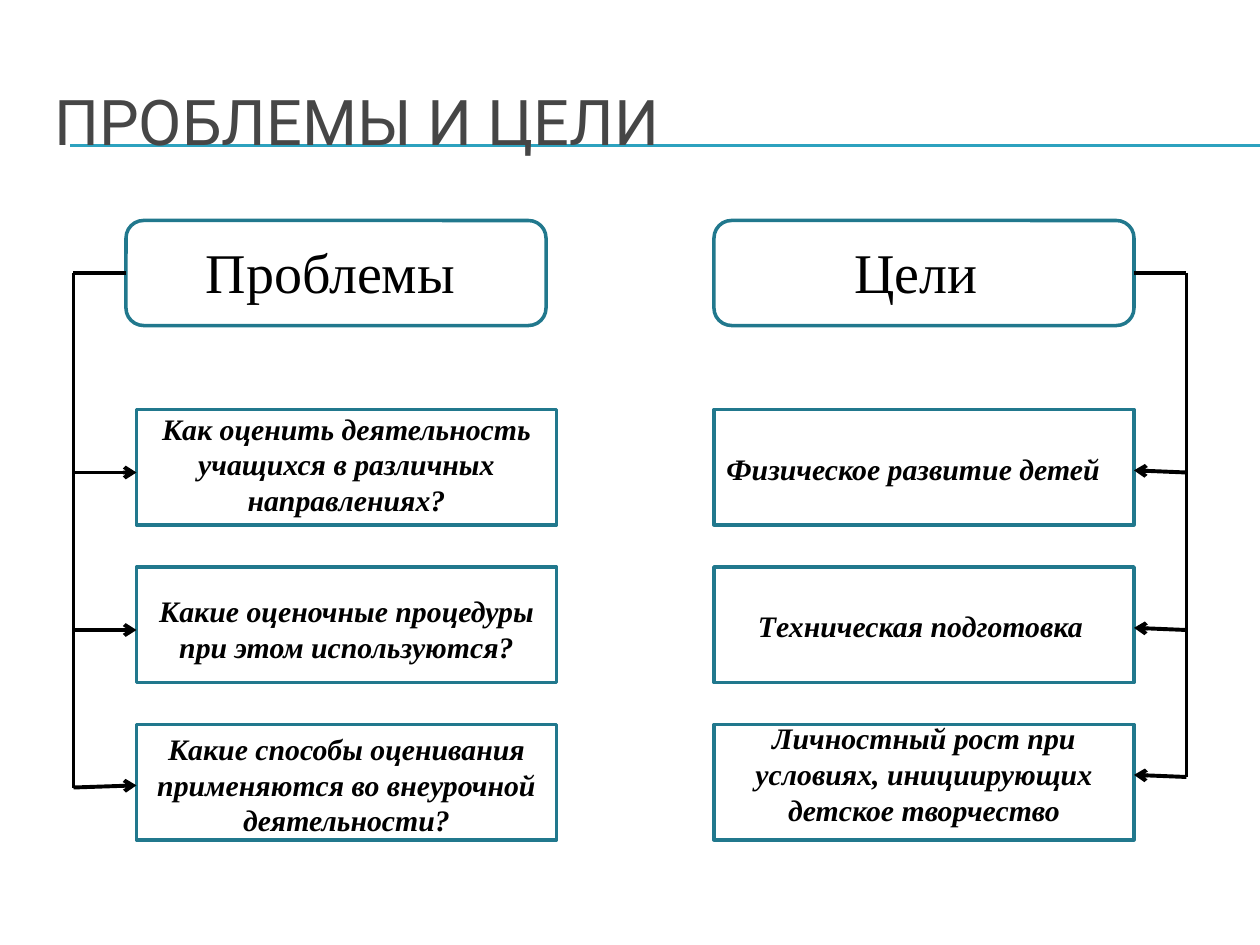
from dataclasses import dataclass

from lxml.etree import SubElement
from pptx import Presentation
from pptx.dml.color import RGBColor
from pptx.enum.shapes import MSO_CONNECTOR, MSO_SHAPE
from pptx.enum.text import MSO_ANCHOR, PP_ALIGN
from pptx.oxml.ns import qn
from pptx.util import Inches, Length, Pt

COLORS = {"title": "464646", "rule": "2DA2BF", "frame": "21788D", "ink": "000000"}

# Grid: twelve units to the inch, 120 columns by 90 rows
COLS, ROWS = 120, 90
BOX_W, HEADER_H, ITEM_H = 40, 10, 11
HEADER_TOP, ITEM_TOP, ITEM_STEP = 21, 39, 15
HEADER_MID = HEADER_TOP + HEADER_H / 2

TITLE_FONT = {"name": "Roboto", "size": Pt(36)}
HEADER_FONT = {"name": "Times New Roman", "size": Pt(32)}
ITEM_FONT = {"name": "Times New Roman", "size": Pt(17), "bold": True, "italic": True}


@dataclass
class Item:
    text: str
    dy: float  # rows from the top of the frame to the text area
    height: float
    dx: float = 0
    align: PP_ALIGN = PP_ALIGN.CENTER


@dataclass
class Branch:
    header: str
    header_left: float
    header_text_left: float
    header_text_width: float
    item_left: float
    trunk: float
    header_edge: float
    item_edge: float
    arrow_starts: list[float]
    arrow_rises: list[float]
    items: list[Item]


BRANCHES = [
    Branch("Проблемы", 12, 18.4, 27.1, 13, 7, 12, 13, [45, 60, 75], [0, 0, 0.2], [
        Item("Как оценить деятельность учащихся в различных направлениях?", -0.5, 11.8),
        Item("Какие оценочные процедуры при этом используются?", 1.9, 8),
        Item("Какие способы оценивания применяются во внеурочной деятельности?", 0, 11.5),
    ]),
    Branch("Цели", 68, 80.2, 15.6, 68, 113, 108, 108, [45, 60, 74], [0.2, 0.2, 0.2], [
        Item("Физическое развитие детей", 3.3, 4.7, align=PP_ALIGN.LEFT),
        Item("Tехническая подготовка", 3.3, 4.7, dx=3, align=PP_ALIGN.LEFT),
        Item("Личностный рост при условиях, инициирующих детское творчество", -1, 11.5),
    ]),
]

prs = Presentation()
prs.slide_width, prs.slide_height = Inches(10), Inches(7.5)
slide = prs.slides.add_slide(prs.slide_layouts[6])


def x(col: float) -> Length:
    return Length(round(prs.slide_width * col / COLS))


def y(row: float) -> Length:
    return Length(round(prs.slide_height * row / ROWS))


def add_line(start: tuple[float, float], end: tuple[float, float], color: str = "ink",
             width: float = 2.25, arrow: bool = False) -> None:
    line = slide.shapes.add_connector(
        MSO_CONNECTOR.STRAIGHT, x(start[0]), y(start[1]), x(end[0]), y(end[1]))
    line.line.color.rgb = RGBColor.from_string(COLORS[color])
    line.line.width = Pt(width)
    properties = line.element.spPr
    if arrow:
        SubElement(properties.find(qn("a:ln")), qn("a:tailEnd"), type="arrow")
    SubElement(properties, qn("a:effectLst"))


def add_frame(kind: MSO_SHAPE, left: float, top: float, height: float) -> None:
    frame = slide.shapes.add_shape(kind, x(left), y(top), x(BOX_W), y(height))
    frame.shadow.inherit = False
    frame.fill.background()
    frame.line.color.rgb = RGBColor.from_string(COLORS["frame"])
    frame.line.width = Pt(2)


def add_text(text: str, left: float, top: float, width: float, height: float,
             font_format: dict, color: str = "ink", align: PP_ALIGN = PP_ALIGN.LEFT,
             anchor: MSO_ANCHOR = MSO_ANCHOR.TOP) -> None:
    frame = slide.shapes.add_textbox(x(left), y(top), x(width), y(height)).text_frame
    frame.word_wrap = True
    frame.vertical_anchor = anchor
    paragraph = frame.paragraphs[0]
    paragraph.alignment = align
    run = paragraph.add_run()
    run.text = text
    for attribute, value in font_format.items():
        setattr(run.font, attribute, value)
    run.font.color.rgb = RGBColor.from_string(COLORS[color])


def draw_branch(branch: Branch) -> None:
    # Header
    add_frame(MSO_SHAPE.ROUNDED_RECTANGLE, branch.header_left, HEADER_TOP, HEADER_H)
    add_text(branch.header, branch.header_text_left, HEADER_TOP + 1,
             branch.header_text_width, 7.7, HEADER_FONT)

    # Trunk from the header down to the last item
    corner = (branch.trunk, HEADER_MID)
    add_line((branch.header_edge, HEADER_MID), corner)
    add_line(corner, (branch.trunk, branch.arrow_starts[-1]))

    # Items with their arrows
    rows = zip(branch.items, branch.arrow_starts, branch.arrow_rises)
    for index, (item, start, rise) in enumerate(rows):
        top = ITEM_TOP + index * ITEM_STEP
        add_frame(MSO_SHAPE.RECTANGLE, branch.item_left, top, ITEM_H)
        add_text(item.text, branch.item_left + item.dx, top + item.dy,
                 BOX_W - item.dx, item.height, ITEM_FONT, align=item.align)
        add_line((branch.trunk, start), (branch.item_edge, start - rise), arrow=True)


# Double rule behind the title
for rule_row in (13.8, 13.9):
    add_line((6.7, rule_row), (COLS, rule_row), "rule", 0.75)

add_text("ПРОБЛЕМЫ И ЦЕЛИ", 4, 6, 114, 11, TITLE_FONT, "title", anchor=MSO_ANCHOR.MIDDLE)

for branch in BRANCHES:
    draw_branch(branch)

prs.save("out.pptx")
